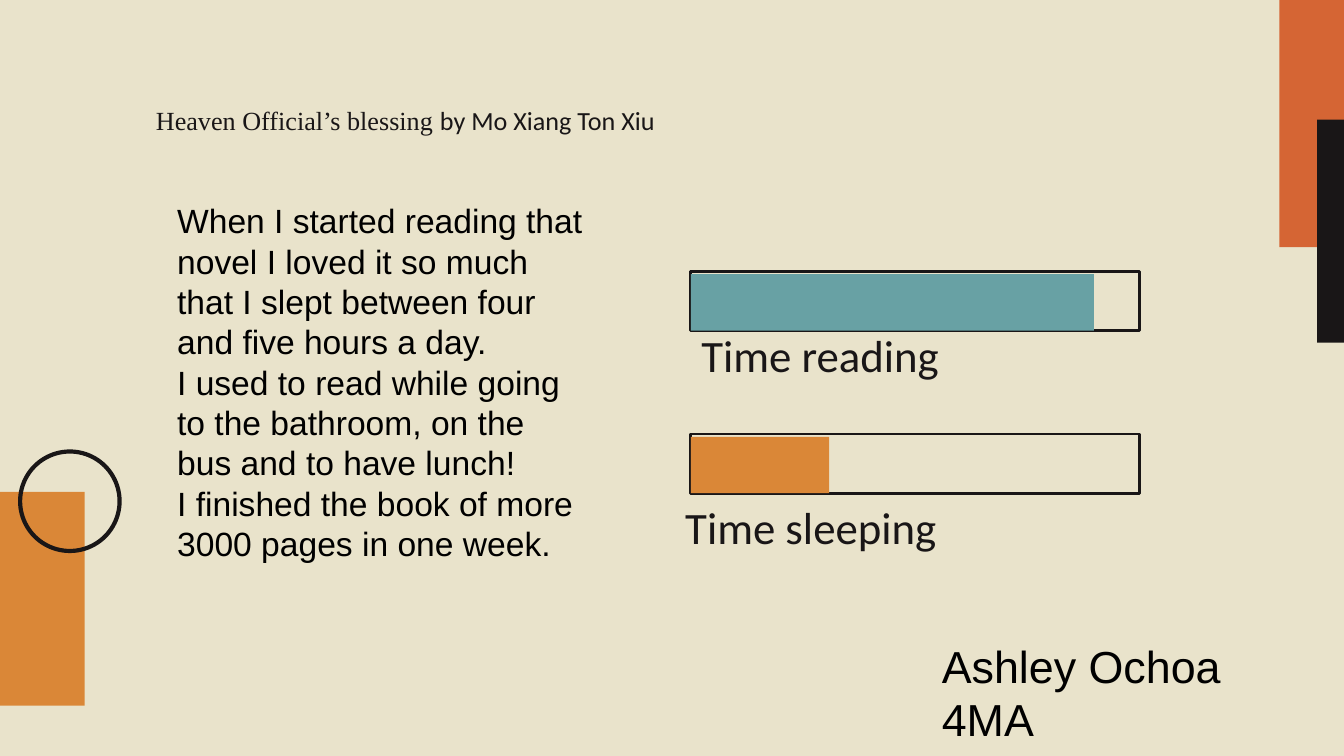
from dataclasses import dataclass

from pptx import Presentation
from pptx.dml.color import RGBColor
from pptx.enum.shapes import MSO_SHAPE
from pptx.enum.text import MSO_ANCHOR, PP_ALIGN
from pptx.util import Inches, Pt


@dataclass(frozen=True)
class Theme:
    """Colours, fonts and type sizes of the slide."""
    paper: str = "E9E3CB"
    ink: str = "191617"
    black: str = "000000"
    rust: str = "D56534"
    amber: str = "DA8737"
    teal: str = "68A1A4"
    serif: str = "Times New Roman"
    sans: str = "Calibri"
    plain: str = "Arial"
    title_size: int = 14
    story_size: int = 18
    label_size: int = 24


THEME = Theme()


def style_font(font, name, size, color):
    """Set face, size and colour of a font."""
    font.name = name
    font.size = Pt(size)
    font.color.rgb = RGBColor.from_string(color)


def add_block(slide, box, preset=MSO_SHAPE.RECTANGLE, fill=None, line=None, width=1.5):
    """Add a flat shape with an optional fill and outline."""
    block = slide.shapes.add_shape(preset, *map(Inches, box))
    block.shadow.inherit = False
    if fill:
        block.fill.solid()
        block.fill.fore_color.rgb = RGBColor.from_string(fill)
    else:
        block.fill.background()
    if line:
        block.line.color.rgb = RGBColor.from_string(line)
        block.line.width = Pt(width)
    else:
        block.line.fill.background()


def add_text(slide, box, lines, face, size, color, anchor=MSO_ANCHOR.TOP, spacing=1.0):
    """Add a wrapped text box with one paragraph for each line."""
    frame = slide.shapes.add_textbox(*map(Inches, box)).text_frame
    frame.word_wrap = True
    frame.vertical_anchor = anchor
    frame.margin_left = frame.margin_right = Inches(0.1)
    frame.margin_top = frame.margin_bottom = Inches(0.1)
    frame.text = "\n".join(lines)
    for paragraph in frame.paragraphs:
        paragraph.line_spacing = spacing
        style_font(paragraph.font, face, size, color)


def add_right_ornament(slide, left, top):
    """Place the two overlapping blocks at the right edge."""
    add_block(slide, (left, top, 0.48, 1.84), fill=THEME.rust)
    add_block(slide, (left + 0.28, top + 0.89, 0.2, 1.66), fill=THEME.ink)


def add_left_ornament(slide, left, top):
    """Place the amber block and the ring at the left edge."""
    add_block(slide, (left, top + 0.3, 0.63, 1.59), fill=THEME.amber)
    add_block(slide, (left + 0.15, top, 0.74, 0.74), MSO_SHAPE.OVAL,
              line=THEME.ink, width=2.25)


def set_title(slide, box, book, author):
    """Move the title placeholder and write the book and its author."""
    title = slide.shapes.title
    title.left, title.top, title.width, title.height = map(Inches, box)
    frame = title.text_frame
    frame.word_wrap = True
    frame.vertical_anchor = MSO_ANCHOR.TOP
    paragraph = frame.paragraphs[0]
    paragraph.alignment = PP_ALIGN.LEFT
    paragraph.line_spacing = 1.15
    for words, face in ((book + " ", THEME.serif), (author, THEME.sans)):
        run = paragraph.add_run()
        run.text = words
        style_font(run.font, face, THEME.title_size, THEME.ink)


def add_meter(slide, box, filled, color, label, label_offset):
    """Draw an outlined bar, its filled part and the label below."""
    left, top, width, height = box
    dx, dy = label_offset
    add_block(slide, box, line=THEME.ink)
    add_block(slide, (left, top + 0.02, filled, height - 0.02), fill=color)
    add_text(slide, (left + dx, top + dy, 2.7, 0.44), [label], THEME.sans,
             THEME.label_size, THEME.ink, MSO_ANCHOR.MIDDLE, 1.15)


def build_slide(deck):
    """Compose the reading slide."""
    slide = deck.slides.add_slide(deck.slide_layouts[5])
    slide.background.fill.solid()
    slide.background.fill.fore_color.rgb = RGBColor.from_string(THEME.paper)
    add_right_ornament(slide, 9.52, 0)
    add_left_ornament(slide, 0, 3.36)
    set_title(slide, (1.06, 0.69, 7.73, 0.37),
              "Heaven Official’s blessing", "by Mo Xiang Ton Xiu")
    add_meter(slide, (5.14, 2.02, 3.34, 0.44), 3, THEME.teal,
              "Time reading", (-0.02, 0.37))
    add_meter(slide, (5.14, 3.23, 3.34, 0.44), 1.03, THEME.amber,
              "Time sleeping", (-0.14, 0.44))
    story = [
        "When I started reading that novel I loved it so much that I slept "
        "between four and five hours a day.",
        "I used to read while going to the bathroom, on the bus and to have lunch!",
        "I finished the book of more 3000 pages in one week.",
    ]
    add_text(slide, (1.22, 1.39, 3.23, 3.02), story, THEME.plain,
             THEME.story_size, THEME.black)
    add_text(slide, (6.91, 4.65, 2.67, 0.84), ["Ashley Ochoa", "4MA"],
             THEME.plain, THEME.label_size, THEME.black)


def main():
    """Create and save the deck in the 16:9 format."""
    deck = Presentation()
    deck.slide_width = Inches(10)
    deck.slide_height = deck.slide_width * 9 // 16
    build_slide(deck)
    deck.save("out.pptx")


if __name__ == "__main__":
    main()
